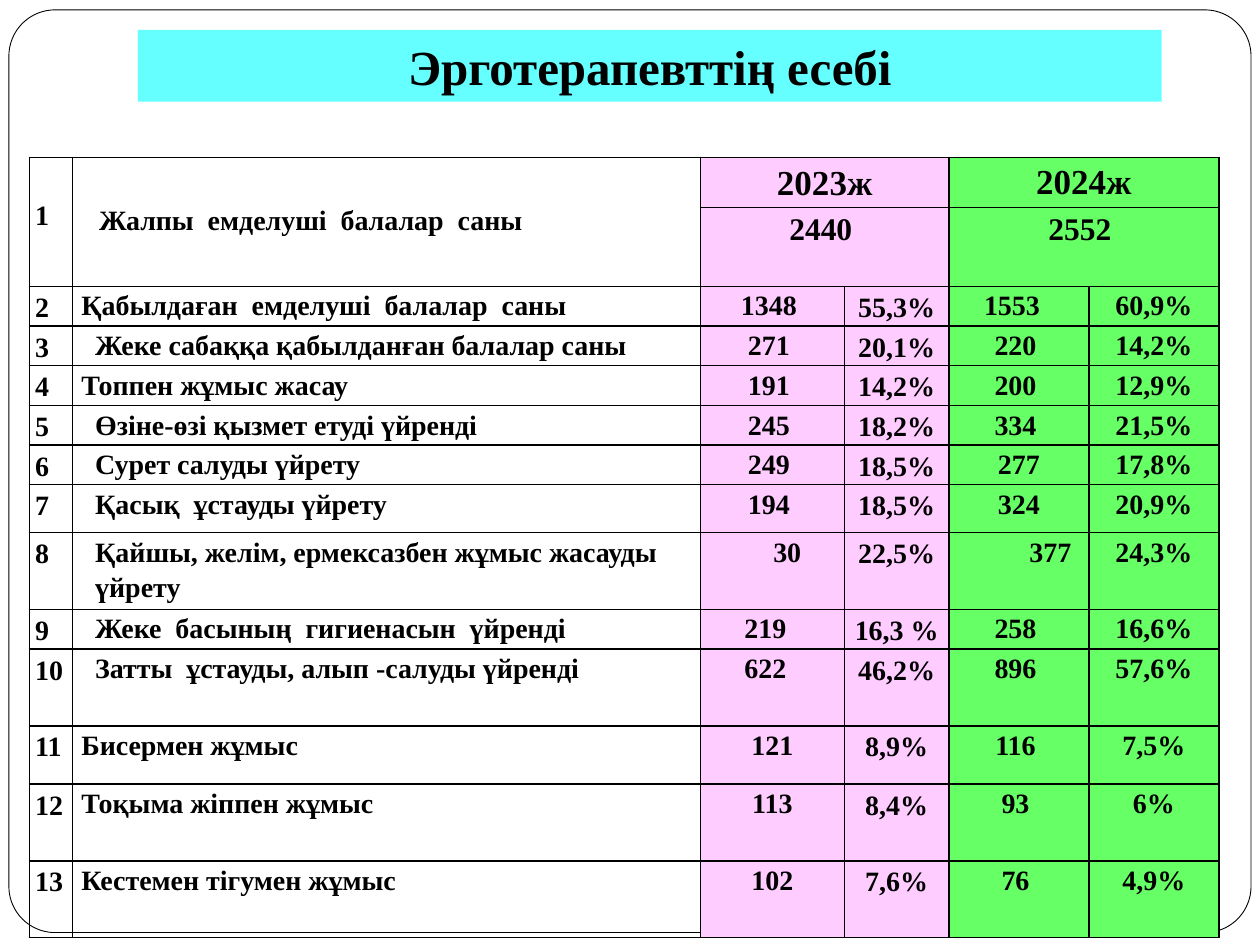
from lxml import etree
from pptx import Presentation
from pptx import util as u
from pptx.dml.color import RGBColor
from pptx.enum import shapes, text
from pptx.oxml import ns

FONT = "Times New Roman"
COLORS = {"ink": "000000", "paper": "FFFFFF", "banner": "66FFFF",
          "2023": "FFCCFF", "2024": "66FF66"}
COLUMNS = [0.87, 12.66, 2.9, 2.11, 2.82, 2.62]
ROWS = [1.01, 1.58, 0.8, 0.8, 0.8, 0.8, 0.8, 0.96, 1.55, 0.8, 1.55, 1.17, 1.55, 1.55]

# Label lines, label indent, then count, sideways shift and share for each year (cm)
REPORT = [
    (["Қабылдаған  емделуші  балалар  саны"], 0, "1348", -0.14, "55,3%", "1553", -0.28, "60,9%"),
    (["Жеке сабаққа қабылданған балалар саны"], 0.28, "271", -0.14, "20,1%", "220", -0.14, "14,2%"),
    (["Топпен жұмыс жасау"], 0, "191", -0.14, "14,2%", "200", -0.14, "12,9%"),
    (["Өзіне-өзі қызмет етуді үйренді"], 0.28, "245", -0.14, "18,2%", "334", -0.14, "21,5%"),
    (["Сурет салуды үйрету"], 0.28, "249", -0.14, "18,5%", "277", 0, "17,8%"),
    (["Қасық  ұстауды үйрету"], 0.28, "194", -0.14, "18,5%", "324", 0, "20,9%"),
    (["Қайшы, желім, ермексазбен жұмыс жасауды", "үйрету"], 0.28,
     "30", 0.6, "22,5%", "377", 1.27, "24,3%"),
    (["Жеке  басының  гигиенасын  үйренді"], 0.28, "219", -0.28, "16,3 %", "258", -0.14, "16,6%"),
    (["Затты  ұстауды, алып -салуды үйренді"], 0.28, "622", -0.28, "46,2%", "896", -0.14, "57,6%"),
    (["Бисермен жұмыс"], 0, "121", 0, "8,9%", "116", -0.14, "7,5%"),
    (["Тоқыма жіппен жұмыс"], 0, "113", 0, "8,4%", "93", -0.14, "6%"),
    (["Кестемен тігумен жұмыс"], 0, "102", 0, "7,6%", "76", -0.14, "4,9%"),
]


def color(name):
    return RGBColor.from_string(COLORS[name])


def add_span(para, words, size):
    span = para.add_run()
    span.text = words
    span.font.name = FONT
    span.font.size = u.Pt(size)
    span.font.bold = True
    span.font.color.rgb = color("ink")


def add_frame(page, left, top, width, height):
    frame = page.shapes.add_shape(shapes.MSO_SHAPE.ROUNDED_RECTANGLE,
                                  u.Cm(left), u.Cm(top), u.Cm(width), u.Cm(height))
    frame.adjustments[0] = 0.05
    frame.shadow.inherit = False
    frame.fill.solid()
    frame.fill.fore_color.rgb = color("paper")
    frame.line.color.rgb = color("ink")
    frame.line.width = u.Pt(0.5)
    page.shapes._spTree.insert(2, frame._element)  # behind the title


def set_title(page, words, left, top, width, height):
    title = page.shapes.title
    title.left, title.top = u.Cm(left), u.Cm(top)
    title.width, title.height = u.Cm(width), u.Cm(height)
    title.fill.solid()
    title.fill.fore_color.rgb = color("banner")
    title.text_frame.vertical_anchor = text.MSO_ANCHOR.MIDDLE
    para = title.text_frame.paragraphs[0]
    para.alignment = text.PP_ALIGN.CENTER
    add_span(para, words, 28)


def set_borders(cell):
    props = cell._tc.get_or_add_tcPr()
    for place, side in enumerate(("lnL", "lnR", "lnT", "lnB")):
        line = etree.Element(ns.qn(f"a:{side}"), w=str(u.Pt(1)))
        fill = etree.SubElement(line, ns.qn("a:solidFill"))
        etree.SubElement(fill, ns.qn("a:srgbClr"), val=COLORS["ink"])
        props.insert(place, line)


def fill_cell(cell, lines, fill=None, size=16, centred=True, inset=0.18, top=0, shift=0):
    """Write lines in a cell; shift moves them right, or left if negative."""
    cell.margin_left = u.Cm(inset + max(shift, 0))
    cell.margin_right = u.Cm(inset + max(-shift, 0))
    cell.margin_top, cell.margin_bottom = u.Cm(top), 0
    if fill:
        cell.fill.solid()
        cell.fill.fore_color.rgb = color(fill)
    for number, words in enumerate(lines):
        frame = cell.text_frame
        para = frame.add_paragraph() if number else frame.paragraphs[0]
        para.alignment = text.PP_ALIGN.CENTER if centred else text.PP_ALIGN.LEFT
        para.line_spacing = 1.15
        add_span(para, words, size)


def fill_header(table):
    for column in (0, 1):
        table.cell(0, column).merge(table.cell(1, column))
    for row in (0, 1):
        for column in (2, 4):
            table.cell(row, column).merge(table.cell(row, column + 1))
    fill_cell(table.cell(0, 0), ["1"], centred=False, inset=0.12, top=0.77)
    fill_cell(table.cell(0, 1), ["Жалпы  емделуші  балалар  саны"], "paper",
              centred=False, inset=0.12, top=0.87, shift=0.42)
    fill_cell(table.cell(0, 2), ["2023ж"], "2023", 20, inset=0.12, top=0.03)
    fill_cell(table.cell(0, 4), ["2024ж"], "2024", 20, inset=0)
    fill_cell(table.cell(1, 2), ["2440"], "2023", 18, shift=-0.16)
    fill_cell(table.cell(1, 4), ["2552"], "2024", 18, shift=-0.16)


def add_report(page, left, top):
    table = page.shapes.add_table(len(ROWS), len(COLUMNS), u.Cm(left), u.Cm(top),
                                  u.Cm(sum(COLUMNS)), u.Cm(sum(ROWS))).table
    table.first_row = table.horz_banding = False
    for column, width in zip(table.columns, COLUMNS):
        column.width = u.Cm(width)
    for row, height in zip(table.rows, ROWS):
        row.height = u.Cm(height)
    for cell in table.iter_cells():
        cell.fill.background()
    fill_header(table)
    for row, entry in enumerate(REPORT, start=2):
        label, indent, old, old_shift, old_share, new, new_shift, new_share = entry
        cells = table.rows[row].cells
        fill_cell(cells[0], [str(row)], centred=False, inset=0.12, top=0.03)
        fill_cell(cells[1], label, centred=False, shift=indent)
        fill_cell(cells[2], [old], "2023", shift=old_shift)
        fill_cell(cells[3], [old_share], "2023", inset=0.12, top=0.03)
        fill_cell(cells[4], [new], "2024", shift=new_shift)
        fill_cell(cells[5], [new_share], "2024", inset=0)
    for cell in table.iter_cells():
        set_borders(cell)


def main():
    deck = Presentation()
    deck.slide_width, deck.slide_height = u.Cm(25.4), u.Cm(19.05)
    page = deck.slides.add_slide(deck.slide_layouts.get_by_name("Title Only"))
    add_frame(page, 0.18, 0.2, 25.04, 18.6)
    set_title(page, "Эрготерапевттің есебі", 2.78, 0.6, 20.64, 1.45)
    add_report(page, 0.59, 3.17)
    deck.save("out.pptx")


if __name__ == "__main__":
    main()
